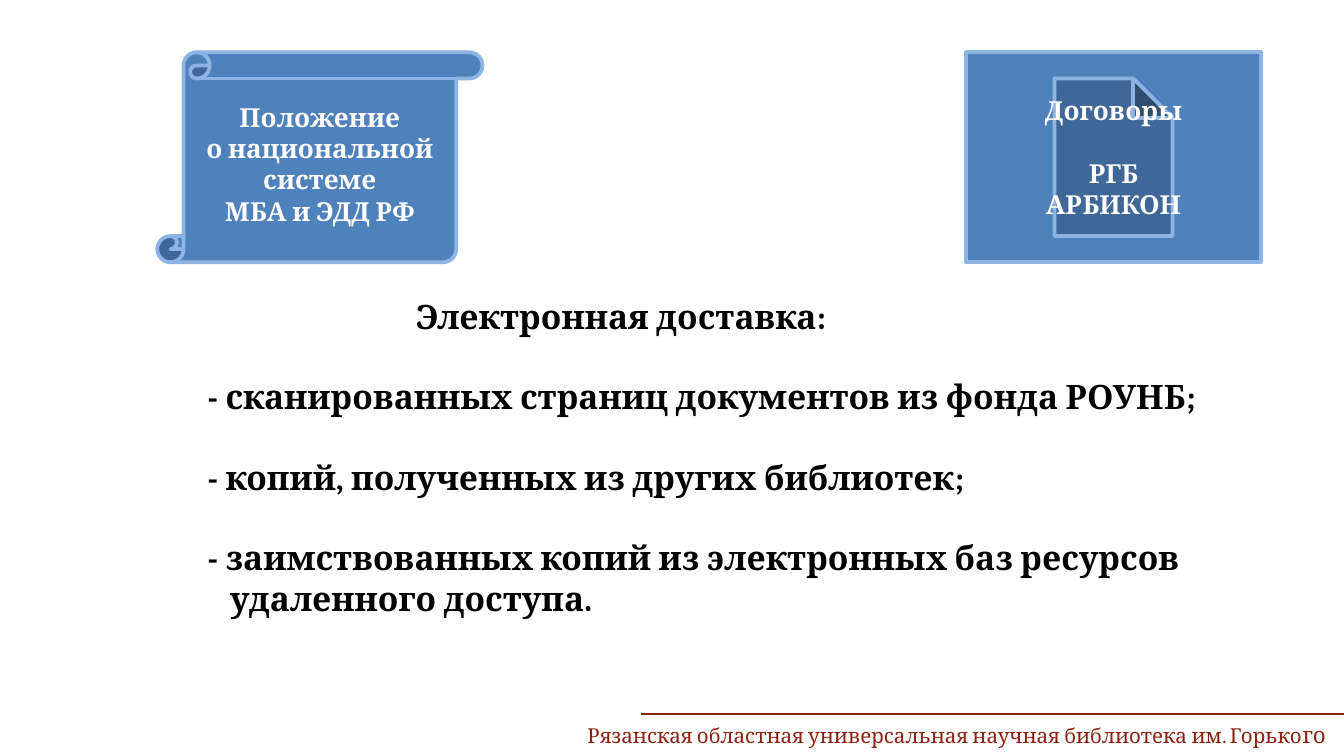
from pptx import Presentation
from pptx.dml.color import RGBColor
from pptx.enum.shapes import MSO_CONNECTOR, MSO_SHAPE as SHAPE
from pptx.enum.text import MSO_ANCHOR as ANCHOR, PP_ALIGN as ALIGN
from pptx.oxml.ns import qn
from pptx.util import Pt
from lxml import etree

FONT = "Cambria"
BLUE, EDGE, WHITE, BLACK, MAROON = "4F81BD", "8EB4E3", "FFFFFF", "000000", "8B210F"


def rgb(color):
    return RGBColor.from_string(color)


def add_run(p, text, size, color, bold=False):
    r = p.add_run()
    r.text = text
    r.font.name = FONT
    r.font.size = Pt(size)
    r.font.bold = bold
    r.font.color.rgb = rgb(color)


def add_paragraph(tf, first, align, before=0):
    p = tf.paragraphs[0] if first else tf.add_paragraph()
    p.alignment = align
    if before:
        p.space_before = Pt(before)
    return p


def add_text_box(slide, box, anchor):
    tf = slide.shapes.add_textbox(*map(Pt, box)).text_frame
    tf.word_wrap = True
    tf.vertical_anchor = anchor
    return tf


def add_document_shape(slide, kind, box, lines):
    """Blue shape with centred lines, each given as (text, space before)."""
    sp = slide.shapes.add_shape(kind, *map(Pt, box))
    sp.shadow.inherit = False
    sp.fill.solid()
    sp.fill.fore_color.rgb = rgb(BLUE)
    sp.line.color.rgb = rgb(EDGE)
    sp.line.width = Pt(2)
    tf = sp.text_frame
    tf.word_wrap = True
    tf.vertical_anchor = ANCHOR.MIDDLE
    for i, (text, before) in enumerate(lines):
        p = add_paragraph(tf, i == 0, ALIGN.CENTER, before)
        add_run(p, text, 14, WHITE, True)


def add_delivery_list(slide, box, heading, items):
    tf = add_text_box(slide, box, ANCHOR.BOTTOM)
    # Heading
    p = add_paragraph(tf, True, ALIGN.LEFT)
    p._p.get_or_add_pPr().set("marL", str(Pt(179)))
    add_run(p, heading, 18, BLACK, True)
    # Items with a hanging indent
    for item in items:
        p = add_paragraph(tf, False, ALIGN.LEFT, 21.5)
        pPr = p._p.get_or_add_pPr()
        pPr.set("marL", str(Pt(79.5)))
        pPr.set("indent", str(Pt(-12)))
        add_run(p, item, 18, BLACK, True)


def add_footer(slide, box, rule_left):
    left, top, width, height = box
    # Rule above the library name
    y = Pt(top - 2)
    rule = slide.shapes.add_connector(
        MSO_CONNECTOR.STRAIGHT, Pt(left + width), y, Pt(rule_left), y)
    rule.line.color.rgb = rgb(MAROON)
    rule.line.width = Pt(1)
    etree.SubElement(rule._element.spPr, qn("a:effectLst"))
    # Library name
    p = add_paragraph(add_text_box(slide, box, ANCHOR.TOP), True, ALIGN.RIGHT)
    p.line_spacing = 0.9
    add_run(p, "Рязанская областная универсальная научная библиотека им. Горько", 11, MAROON)
    add_run(p, "го ", 12, MAROON)


def main():
    prs = Presentation()
    prs.slide_width, prs.slide_height = Pt(720), Pt(405)
    slide = prs.slides.add_slide(prs.slide_layouts[6])
    add_footer(slide, (281.5, 384.5, 438.5, 20), 343.5)
    add_document_shape(slide, SHAPE.VERTICAL_SCROLL, (84.25, 28, 174.25, 112.5), [
        ("Положение", 0), ("о национальной системе", 0), ("МБА и ЭДД РФ", 0)])
    add_delivery_list(slide, (36.7, 110, 657.4, 224.5), "Электронная доставка:", [
        "- сканированных страниц документов из фонда РОУНБ;",
        "- копий, полученных из других библиотек;",
        "- заимствованных копий из электронных баз ресурсов удаленного доступа."])
    add_document_shape(slide, SHAPE.ACTION_BUTTON_DOCUMENT, (517.7, 28, 157.7, 112.5), [
        ("Договоры", 0), ("РГБ", 17), ("АРБИКОН", 0)])
    prs.save("out.pptx")


if __name__ == "__main__":
    main()
